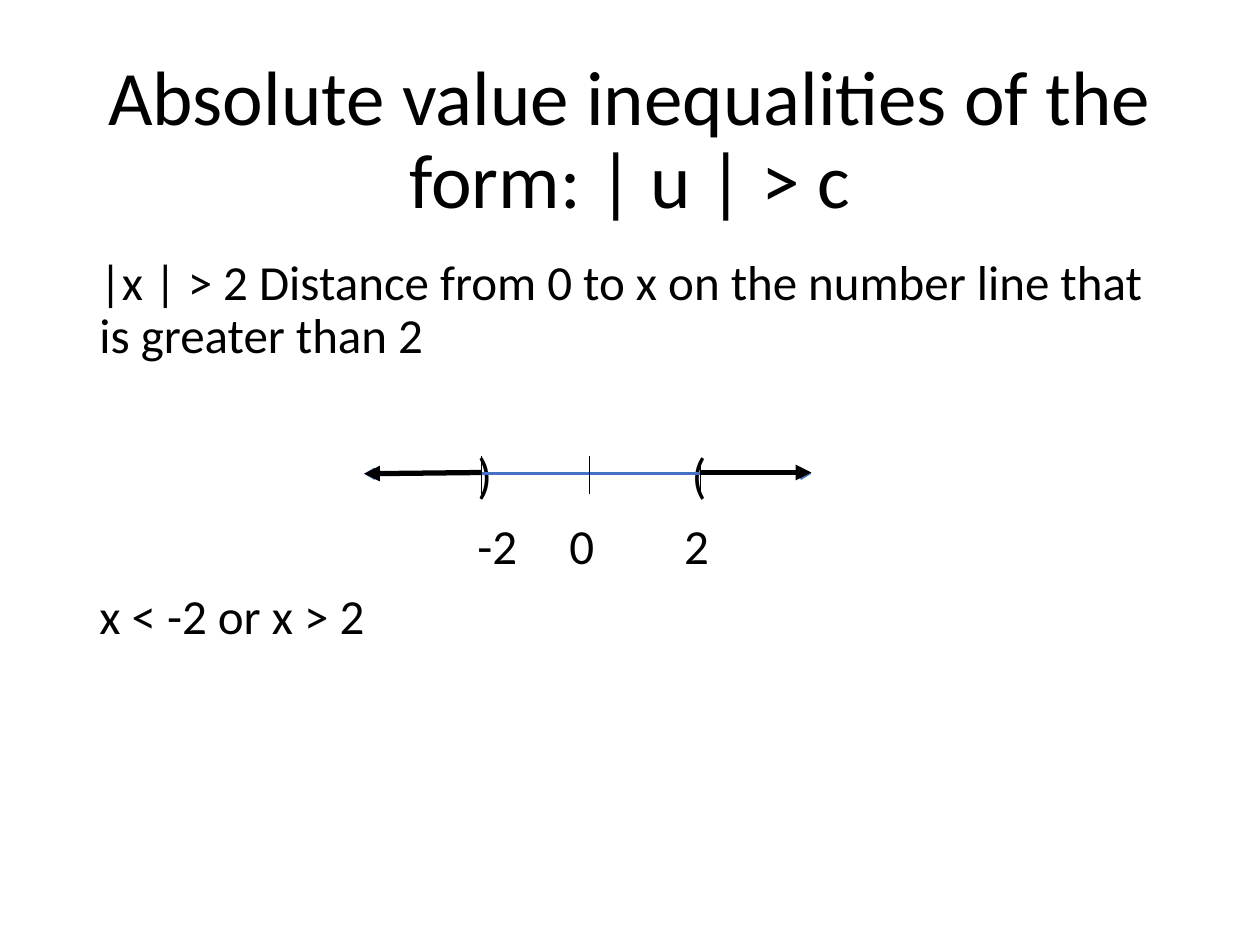
from dataclasses import dataclass

from lxml.etree import SubElement
from pptx import Presentation
from pptx.dml.color import RGBColor
from pptx.enum.shapes import MSO_CONNECTOR
from pptx.enum.text import MSO_ANCHOR, PP_ALIGN
from pptx.oxml.ns import qn
from pptx.util import Inches, Pt

FONT = "Calibri"
BLACK, BLUE = "000000", "4472C4"
LEFT, WIDTH = 0.69, 8.62
LINE_LEFT, LINE_RIGHT, LINE_Y = 2.89, 6.44, 3.76
MINUS_TWO, ZERO, TWO = 3.82, 4.68, 5.56
TICK = 0.3


@dataclass
class Para:
    text: str
    size: float = 28
    before: float = 10
    align: PP_ALIGN = PP_ALIGN.LEFT
    tabs: tuple[float, ...] = ()


@dataclass
class Line:
    x1: float
    y1: float
    x2: float
    y2: float
    color: str
    weight: float
    head: str = ""
    tail: str = ""


def rgb(color: str) -> RGBColor:
    return RGBColor.from_string(color)


def add_text(shapes, top: float, height: float, paras: list[Para],
             anchor: MSO_ANCHOR = MSO_ANCHOR.TOP) -> None:
    sp = shapes.add_textbox(Inches(LEFT), Inches(top), Inches(WIDTH), Inches(height))
    tf = sp.text_frame
    tf.word_wrap = True
    tf.vertical_anchor = anchor
    for i, para in enumerate(paras):
        p = tf.add_paragraph() if i else tf.paragraphs[0]
        p.text = para.text
        p.alignment = para.align
        p.line_spacing = 0.9
        p.space_before = Pt(para.before)
        if para.tabs:
            tab_list = SubElement(p._p.get_or_add_pPr(), qn("a:tabLst"))
            for stop in para.tabs:
                SubElement(tab_list, qn("a:tab"), pos=str(Inches(stop)), algn="l")
        p.font.name = FONT
        p.font.size = Pt(para.size)
        p.font.color.rgb = rgb(BLACK)


def add_line(shapes, line: Line) -> None:
    cxn = shapes.add_connector(MSO_CONNECTOR.STRAIGHT, Inches(line.x1), Inches(line.y1),
                               Inches(line.x2), Inches(line.y2))
    cxn.line.color.rgb = rgb(line.color)
    cxn.line.width = Pt(line.weight)
    ln = cxn.line._get_or_add_ln()
    for tag, kind in (("a:headEnd", line.head), ("a:tailEnd", line.tail)):
        if kind:
            SubElement(ln, qn(tag), type=kind)
    SubElement(cxn._element.spPr, qn("a:effectLst"))


def main() -> None:
    prs = Presentation()
    prs.slide_width, prs.slide_height = Inches(10), Inches(7.5)
    s = prs.slides.add_slide(prs.slide_layouts[6])

    # Explanation, with brackets and labels set on tab stops
    add_text(s.shapes, 2, 4.76, [
        Para("|x | > 2 Distance from 0 to x on the number line that is greater than 2"),
        Para("\t)\t(", before=50, tabs=(3, 4.7)),
        Para("\t-2\t0\t2", tabs=(3, 3.73, 4.64)),
        Para("x < -2 or x > 2"),
    ])

    # Number line with its ticks
    number_line = s.shapes.add_group_shape().shapes
    add_line(number_line, Line(LINE_LEFT, LINE_Y, LINE_RIGHT, LINE_Y, BLUE, 1.5,
                               head="arrow", tail="arrow"))
    for x, top in ((ZERO, 3.62), (MINUS_TWO, 3.62), (TWO, 3.64)):
        add_line(number_line, Line(x, top, x, top + TICK, BLACK, 0.5))

    # Title
    add_text(s.shapes, 0.4, 1.45, [
        Para("Absolute value inequalities of the form: | u | > c", 44, 0, PP_ALIGN.CENTER),
    ], MSO_ANCHOR.MIDDLE)

    # Solution rays
    for start, end, end_y in ((MINUS_TWO, LINE_LEFT, LINE_Y), (TWO, LINE_RIGHT, 3.75)):
        add_line(s.shapes, Line(start, 3.75, end, end_y, BLACK, 3, tail="triangle"))

    prs.save("out.pptx")


if __name__ == "__main__":
    main()
